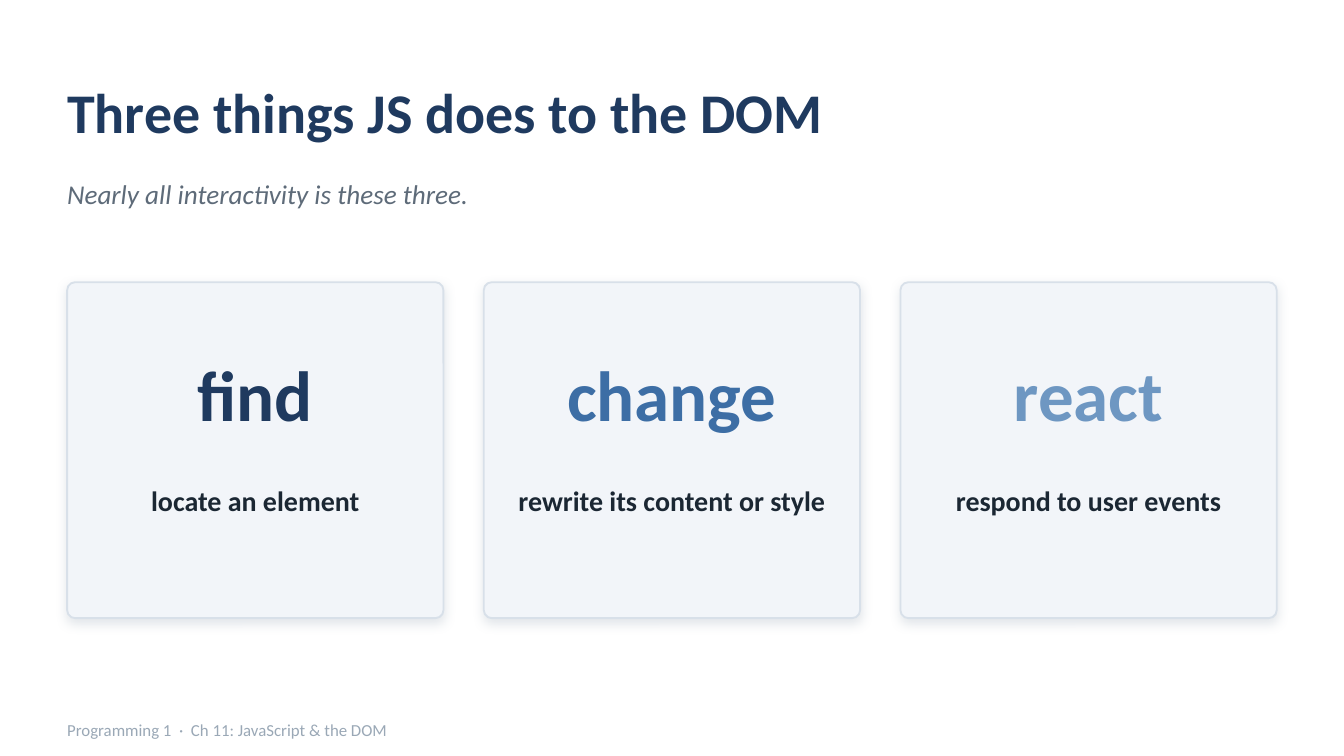
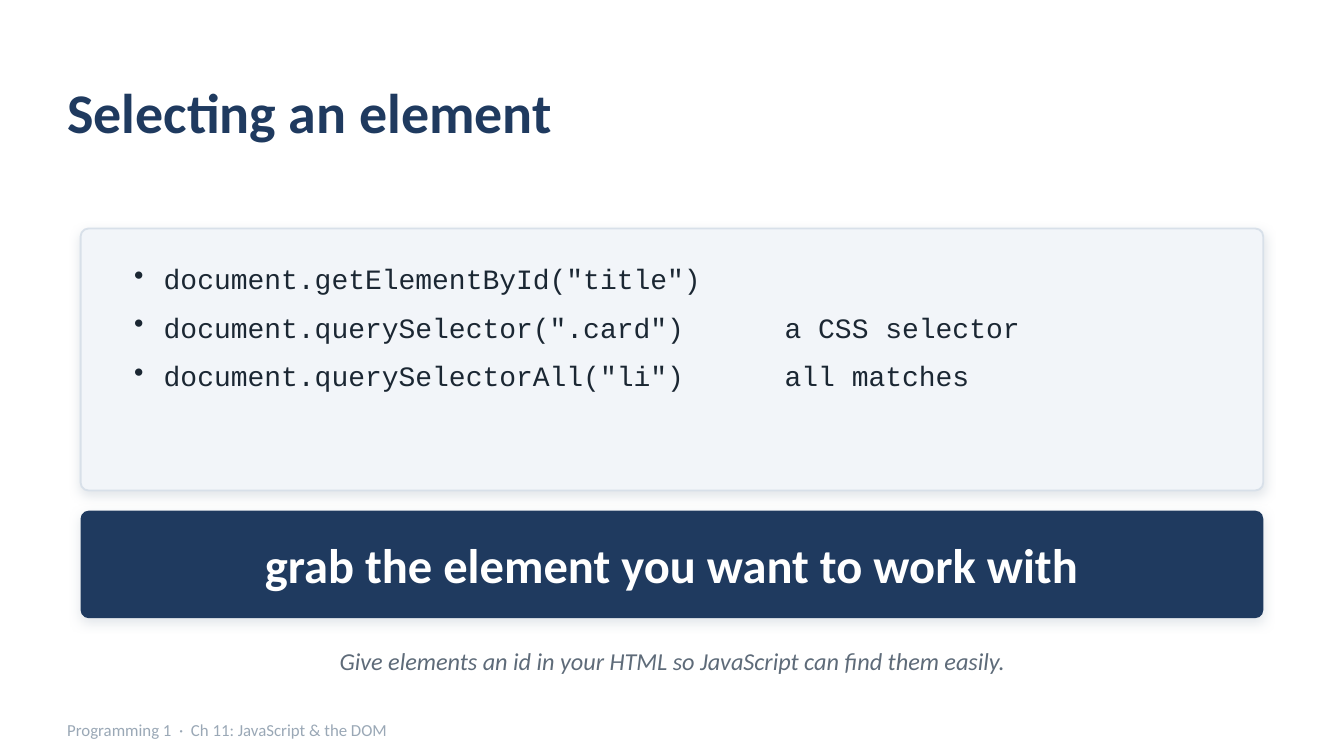
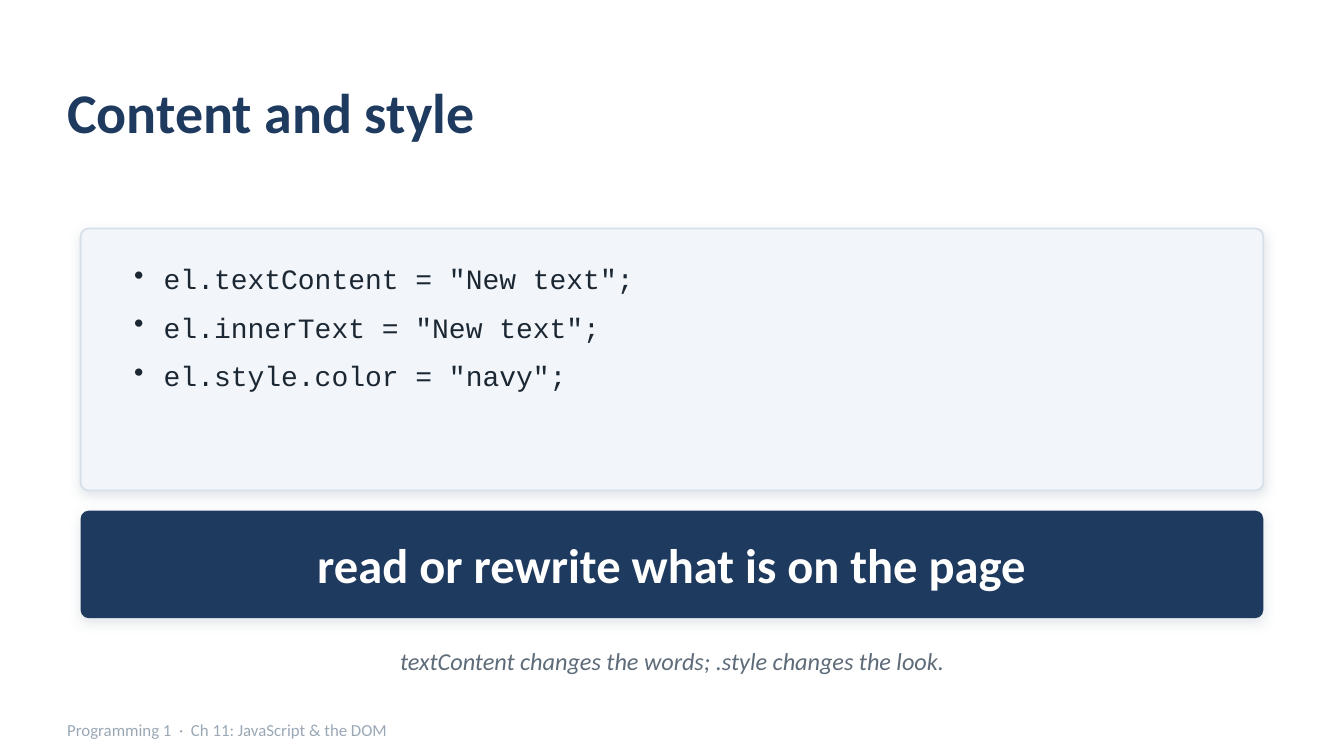
import pptx
import pptx.dml.color
import pptx.enum.shapes
import pptx.enum.text
import pptx.oxml
import pptx.oxml.ns
import pptx.util
from pptx.util import Inches

COLORS = {
    "navy": "1F3A5F", "blue": "3D6EA5", "sky": "6E97C2", "ink": "1B2733",
    "slate": "5E6B79", "mist": "9AA8B6", "panel": "F2F5F9", "border": "D8E0E9",
    "white": "FFFFFF",
}
STYLES = {
    "title": {"size": 30, "color": "navy", "bold": True},
    "subtitle": {"size": 14.5, "color": "slate", "italic": True},
    "verb": {"size": 38, "bold": True},
    "caption": {"size": 15, "color": "ink", "bold": True},
    "code": {"size": 15, "color": "ink", "name": "Courier New"},
    "banner": {"size": 26, "color": "white", "bold": True},
    "note": {"size": 13, "color": "slate", "italic": True},
    "footer": {"size": 9, "color": "mist"},
}
FOOTER = "Programming 1  ·  Ch 11: JavaScript & the DOM"
CORNER = 0.06
VERBS = [
    ("find", "navy", "locate an element"),
    ("change", "blue", "rewrite its content or style"),
    ("react", "sky", "respond to user events"),
]
CODE_PAGES = [
    ("Selecting an element",
     ['document.getElementById("title")',
      'document.querySelector(".card")\ta CSS selector',
      'document.querySelectorAll("li")\tall matches'],
     "grab the element you want to work with",
     "Give elements an id in your HTML so JavaScript can find them easily."),
    ("Content and style",
     ['el.textContent = "New text";',
      'el.innerText = "New text";',
      'el.style.color = "navy";'],
     "read or rewrite what is on the page",
     "textContent changes the words; .style changes the look."),
]


def rgb(name):
    """Return the named colour."""
    return pptx.dml.color.RGBColor.from_string(COLORS[name])


def add_xml(parent, markup):
    """Append a DrawingML element to its parent."""
    namespace = pptx.oxml.ns.nsdecls("a")
    parent.append(pptx.oxml.parse_xml(markup.replace(">", f" {namespace}>", 1)))


def write(para, text, style, **changes):
    """Add a run to a paragraph in one of the shared styles."""
    span = para.add_run()
    span.text = text
    values = {"name": "Calibri", **STYLES[style], **changes}
    span.font.color.rgb = rgb(values.pop("color"))
    values["size"] = pptx.util.Pt(values["size"])
    for key, value in values.items():
        setattr(span.font, key, value)


def add_frame(page, left, top, width, height, inset=0, anchor="MIDDLE"):
    """Add an empty wrapping text box and return its text frame."""
    box = page.shapes.add_textbox(Inches(left), Inches(top), Inches(width), Inches(height))
    frame = box.text_frame
    frame.word_wrap = True
    frame.vertical_anchor = pptx.enum.text.MSO_ANCHOR[anchor]
    if inset is not None:
        for side in ("left", "top", "right", "bottom"):
            setattr(frame, f"margin_{side}", Inches(inset))
    return frame


def add_label(page, box, text, style, align="LEFT", anchor="MIDDLE", **changes):
    """Add a single line of text in a box without insets."""
    para = add_frame(page, *box, anchor=anchor).paragraphs[0]
    para.alignment = pptx.enum.text.PP_ALIGN[align]
    write(para, text, style, **changes)


def add_panel(page, left, top, width, height, fill="panel", border="border"):
    """Add a rounded panel with a soft shadow below it."""
    panel = page.shapes.add_shape(
        pptx.enum.shapes.MSO_SHAPE.ROUNDED_RECTANGLE,
        Inches(left), Inches(top), Inches(width), Inches(height))
    panel.adjustments[0] = CORNER / min(width, height)
    panel.fill.solid()
    panel.fill.fore_color.rgb = rgb(fill)
    if border:
        panel.line.color.rgb = rgb(border)
        panel.line.width = pptx.util.Pt(1)
    else:
        panel.line.fill.background()
    panel.shadow.inherit = False
    effects = panel._element.spPr.find(pptx.oxml.ns.qn("a:effectLst"))
    add_xml(effects, f'<a:outerShdw blurRad="{pptx.util.Pt(6)}" dist="{pptx.util.Pt(2)}" '
                     'dir="5400000" algn="bl" rotWithShape="0">'
                     f'<a:srgbClr val="{COLORS["mist"]}"><a:alpha val="28000"/></a:srgbClr>'
                     '</a:outerShdw>')


def add_page(deck, title):
    """Add a blank page with the shared title and footer."""
    page = deck.slides.add_slide(deck.slide_layouts[6])
    page.background.fill.solid()
    page.background.fill.fore_color.rgb = rgb("white")
    add_label(page, (0.5, 0.4, 9, 0.85), title, "title")
    add_label(page, (0.5, 5.3, 8, 0.26), FOOTER, "footer")
    return page


def add_verb_card(page, left, top, width, height, verb, color, caption):
    """Add a card with a large verb above its caption."""
    add_panel(page, left, top, width, height)
    add_label(page, (left + 0.1, top + 0.35, width - 0.2, 0.95), verb, "verb", "CENTER", color=color)
    add_label(page, (left + 0.15, top + 1.5, width - 0.3, 0.8), caption, "caption", "CENTER", "TOP")


def add_code_panel(page, left, top, width, height, lines):
    """Add a panel with a bulleted list of code lines."""
    add_panel(page, left, top, width, height)
    frame = add_frame(page, left + 0.3, top + 0.2, width - 0.6, height - 0.35, None, "TOP")
    indent = Inches(0.22)
    for number, line in enumerate(lines):
        para = frame.add_paragraph() if number else frame.paragraphs[0]
        para.space_after = pptx.util.Pt(8)
        properties = para._p.get_or_add_pPr()
        properties.set("marL", str(indent))
        properties.set("indent", str(-indent))
        add_xml(properties, '<a:buSzPct val="100000"></a:buSzPct>')
        add_xml(properties, '<a:buChar char="•"></a:buChar>')
        if "\t" in line:
            add_xml(properties, f'<a:tabLst><a:tab pos="{Inches(4.84)}" algn="l"/></a:tabLst>')
        write(para, line, "code")


def add_banner(page, left, top, width, height, text):
    """Add a dark band with a centred statement."""
    add_panel(page, left, top, width, height, "navy", None)
    add_label(page, (left, top + 0.03, width, height - 0.06), text, "banner", "CENTER")


def add_verbs_page(deck):
    """Add the page with three equal verb cards."""
    page = add_page(deck, "Three things JS does to the DOM")
    add_label(page, (0.5, 1.24, 9, 0.4), "Nearly all interactivity is these three.", "subtitle")
    width, gap = 2.8, 0.3
    for column, verb in enumerate(VERBS):
        add_verb_card(page, 0.5 + column * (width + gap), 2.1, width, 2.5, *verb)


def add_code_page(deck, title, lines, statement, note):
    """Add a page with code, a statement and a closing note."""
    page = add_page(deck, title)
    left, width = 0.6, 8.8
    add_code_panel(page, left, 1.7, width, 1.95, lines)
    add_banner(page, left, 3.8, width, 0.8, statement)
    add_label(page, (left, 4.72, width, 0.4), note, "note", "CENTER")


def main():
    """Build the deck and save it."""
    deck = pptx.Presentation()
    deck.slide_width = Inches(10)
    deck.slide_height = deck.slide_width * 9 // 16
    add_verbs_page(deck)
    for content in CODE_PAGES:
        add_code_page(deck, *content)
    deck.save("out.pptx")


if __name__ == "__main__":
    main()
